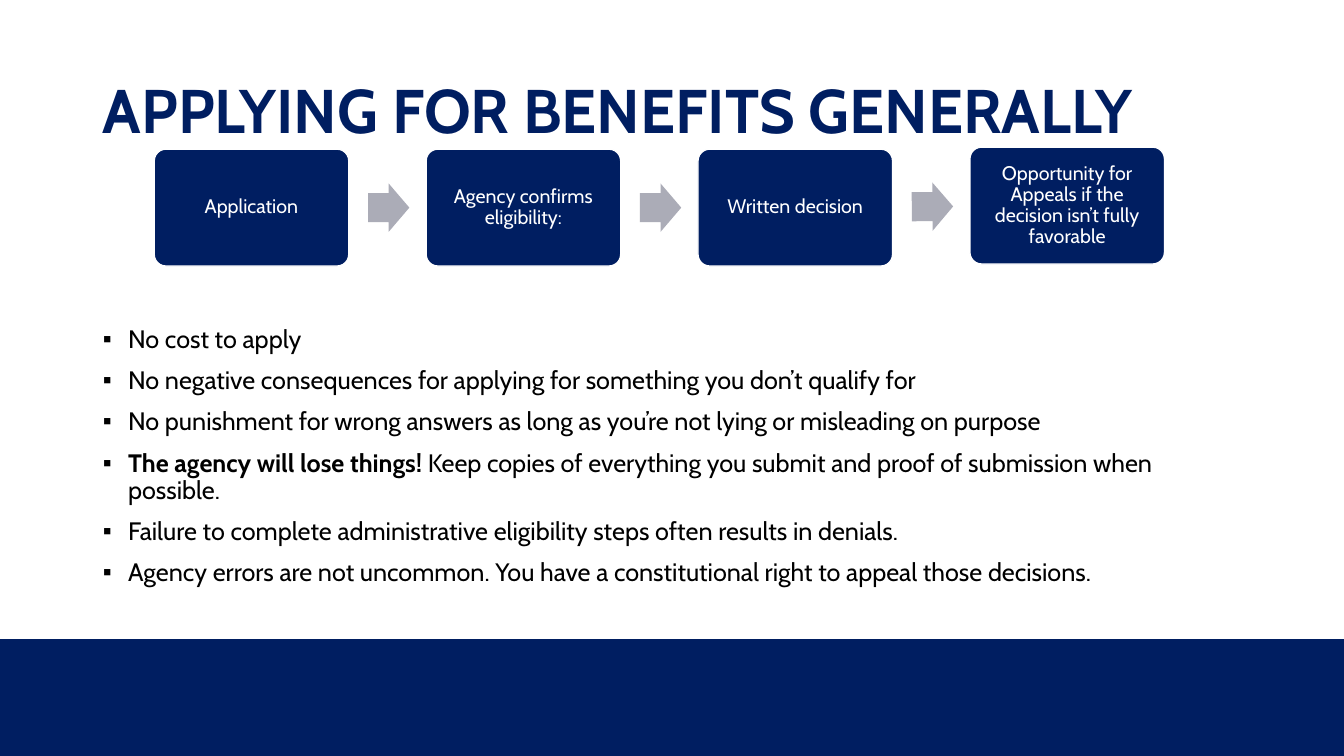
from lxml import etree
from pptx import Presentation, util as u
from pptx.dml.color import RGBColor
from pptx.enum import shapes, text
from pptx.oxml.ns import qn

NAVY = RGBColor(0x00, 0x1E, 0x61)
GREY = RGBColor(0xAB, 0xAC, 0xB7)
WHITE = RGBColor(0xFF, 0xFF, 0xFF)
BLACK = RGBColor(0x00, 0x00, 0x00)
FONT = "Cabin"

TITLE = "APPLYING FOR BENEFITS GENERALLY"
STEPS = [
    "Application",
    "Agency confirms eligibility:",
    "Written decision",
    "Opportunity for Appeals if the decision isn’t fully favorable",
]
# Each bullet is a list of (words, bold) spans.
BULLETS = [
    [("No cost to apply", False)],
    [("No negative consequences for applying for something you don’t qualify for", False)],
    [("No punishment for wrong answers as long as you’re not lying or misleading on purpose", False)],
    [("The agency will lose things! ", True),
     ("Keep copies of everything you submit and proof of submission when possible.", False)],
    [("Failure to complete administrative eligibility steps often results in denials.", False)],
    [("Agency errors are not uncommon. You have a constitutional right to appeal those decisions.", False)],
]


def apply_format(target, values):
    for name, value in values.items():
        setattr(target, name, value)


def place(holder, box):
    for name, length in zip(("left", "top", "width", "height"), box):
        setattr(holder, name, u.Inches(length))


def add_span(para, words, size, color, bold=False):
    span = para.add_run()
    span.text = words
    apply_format(span.font, {"name": FONT, "size": u.Pt(size), "bold": bold})
    span.font.color.rgb = color


def add_block(page, kind, box, fill):
    """Add a plain filled shape without outline or shadow."""
    block = page.shapes.add_shape(kind, *(u.Inches(length) for length in box))
    block.shadow.inherit = False
    block.fill.solid()
    block.fill.fore_color.rgb = fill
    block.line.fill.background()
    return block


def add_title(page, box):
    title = page.shapes.title
    place(title, box)
    apply_format(title.text_frame, {
        "word_wrap": True,
        "auto_size": text.MSO_AUTO_SIZE.NONE,
        "vertical_anchor": text.MSO_ANCHOR.MIDDLE,
    })
    para = title.text_frame.paragraphs[0]
    apply_format(para, {"alignment": text.PP_ALIGN.LEFT, "line_spacing": 0.9})
    add_span(para, TITLE, 44, NAVY, True)


def set_bullet(para, sign, indent):
    props = para._p.get_or_add_pPr()
    props.set("marL", str(u.Inches(indent)))
    props.set("indent", str(-u.Inches(indent)))
    etree.SubElement(props, qn("a:buChar")).set("char", sign)


def add_bullets(page, box):
    body = page.placeholders[1]
    place(body, box)
    frame = body.text_frame
    apply_format(frame, {"word_wrap": True, "auto_size": text.MSO_AUTO_SIZE.NONE})
    for index, spans in enumerate(BULLETS):
        para = frame.add_paragraph() if index else frame.paragraphs[0]
        set_bullet(para, "▪", 0.25)
        apply_format(para, {
            "line_spacing": 0.9,
            "space_before": u.Pt(10 if index else 0),
            "space_after": u.Pt(0),
        })
        for words, bold in spans:
            add_span(para, words, 18, BLACK, bold)


def add_step(page, box, words):
    card = add_block(page, shapes.MSO_SHAPE.ROUNDED_RECTANGLE, box, NAVY)
    card.adjustments[0] = 0.1
    card.line.color.rgb = WHITE
    card.line.width = u.Pt(1)
    frame = card.text_frame
    apply_format(frame, {"word_wrap": True, "vertical_anchor": text.MSO_ANCHOR.MIDDLE})
    apply_format(frame, {f"margin_{side}": u.Inches(0.09)
                         for side in ("left", "top", "right", "bottom")})
    para = frame.paragraphs[0]
    apply_format(para, {"alignment": text.PP_ALIGN.CENTER, "line_spacing": 0.9})
    add_span(para, words, 14, WHITE)


def add_process(page, box):
    """Spread the steps over the box, an arrow in each gap; the last step sits a little higher."""
    left, top, width, height = box
    step_width, arrow_width, arrow_height = 1.93, 0.41, 0.48
    last = len(STEPS) - 1
    pitch = (width - step_width) / last
    arrow_shift = step_width + 0.19
    for index, words in enumerate(STEPS):
        x = left + index * pitch
        lift = 0.02 if index == last else 0
        add_step(page, (x, top - lift, step_width, height), words)
        if index < last:
            tilted = index == last - 1
            y = top + (height - arrow_height) / 2 - (0.01 if tilted else 0)
            arrow = add_block(page, shapes.MSO_SHAPE.RIGHT_ARROW,
                              (x + arrow_shift, y, arrow_width, arrow_height), GREY)
            arrow.adjustments[0] = 0.6
            arrow.adjustments[1] = 0.5
            arrow.rotation = 359.6 if tilted else 0


def main():
    deck = Presentation()
    deck.slide_width, deck.slide_height = u.Inches(13.33), u.Inches(7.5)
    page = deck.slides.add_slide(deck.slide_layouts[1])
    add_block(page, shapes.MSO_SHAPE.RECTANGLE, (0, 6.34, 13.33, 1.16), NAVY)
    add_title(page, (0.92, 0.4, 11.5, 1.45))
    add_bullets(page, (0.92, 3.19, 11.5, 2.33))
    add_process(page, (1.53, 1.48, 10.02, 1.16))
    deck.save("out.pptx")


if __name__ == "__main__":
    main()
